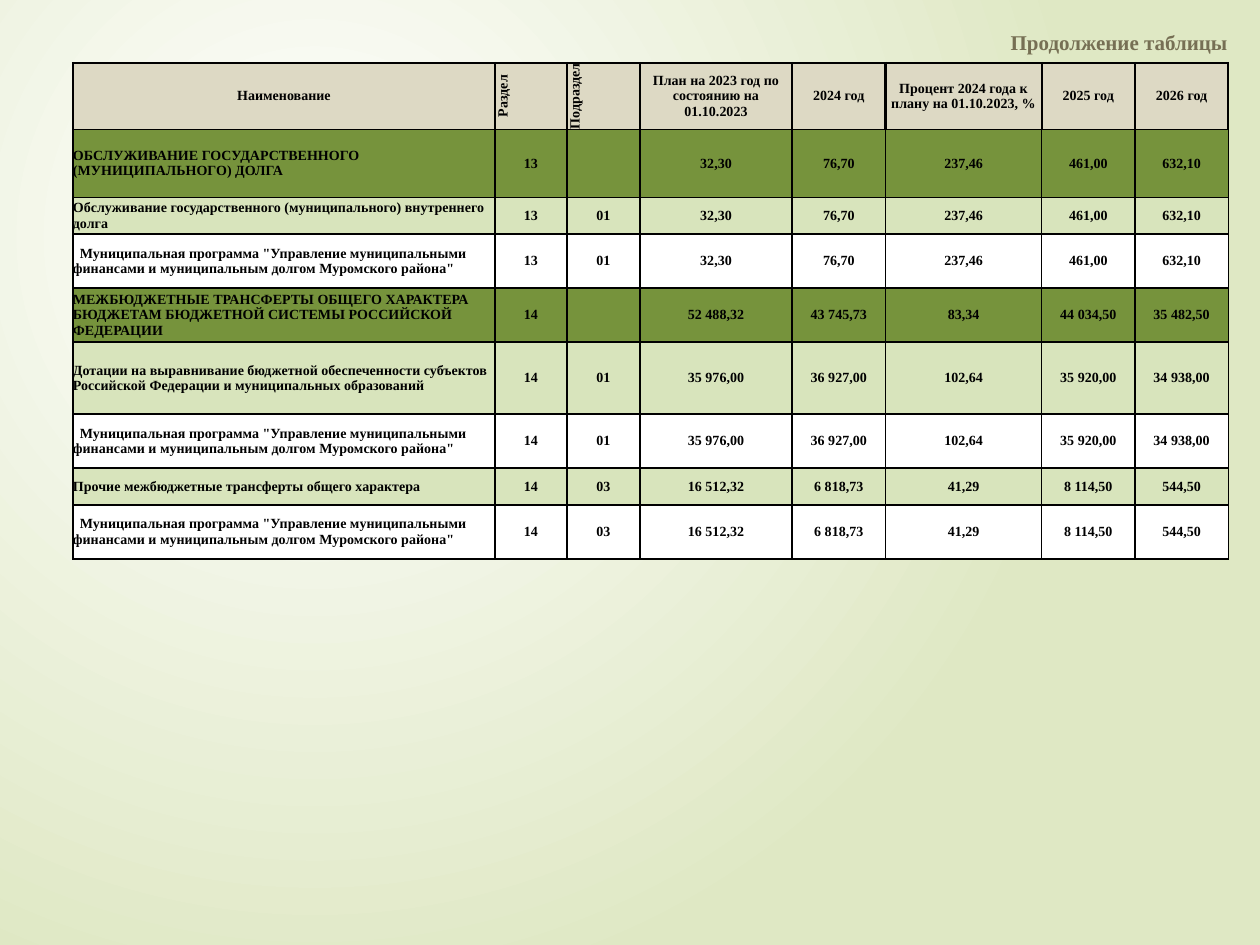
from dataclasses import dataclass

from lxml.etree import SubElement
from pptx import Presentation
from pptx.dml.color import RGBColor
from pptx.enum.text import MSO_ANCHOR, MSO_AUTO_SIZE, PP_ALIGN
from pptx.oxml import parse_xml
from pptx.oxml.ns import nsdecls, qn
from pptx.util import Cm, Pt


@dataclass(frozen=True)
class Theme:
    font: str = "Times New Roman"
    title_size: float = 12
    table_size: float = 8
    title_color: str = "766F54"
    ink: str = "000000"
    header: str = "DDD9C4"
    section: str = "76933C"
    subsection: str = "D8E4BC"
    program: str = "FFFFFF"
    glow: str = "FFFFFF"
    backdrop: str = "DFE8C4"
    thin: float = 1
    thick: float = 1.5
    program_indent: float = 0.14


class BudgetSlide:
    def __init__(self, deck, theme):
        self.theme = theme
        self.slide = deck.slides.add_slide(deck.slide_layouts[5])

    def background(self):
        """Radial gradient centred in the upper left part."""
        stops = "".join(
            f'<a:gs pos="{pos}"><a:srgbClr val="{color}"/></a:gs>'
            for pos, color in ((0, self.theme.glow), (100000, self.theme.backdrop))
        )
        backdrop = parse_xml(
            f'<p:bg {nsdecls("p", "a")}><p:bgPr><a:gradFill rotWithShape="1">'
            f"<a:gsLst>{stops}</a:gsLst>"
            '<a:path path="circle">'
            '<a:fillToRect l="50000" t="50000" r="100000" b="100000"/></a:path>'
            "</a:gradFill><a:effectLst/></p:bgPr></p:bg>"
        )
        self.slide.element.cSld.insert(0, backdrop)

    def add_run(self, paragraph, text, size, color):
        run = paragraph.add_run()
        run.text = text
        run.font.name = self.theme.font
        run.font.size = Pt(size)
        run.font.bold = True
        run.font.color.rgb = RGBColor.from_string(color)

    def title(self, text, left, top, width, height):
        heading = self.slide.shapes.title
        heading.left, heading.top = Cm(left), Cm(top)
        heading.width, heading.height = Cm(width), Cm(height)
        frame = heading.text_frame
        frame.word_wrap = True
        frame.auto_size = MSO_AUTO_SIZE.NONE
        frame.vertical_anchor = MSO_ANCHOR.TOP
        paragraph = frame.paragraphs[0]
        paragraph.alignment = PP_ALIGN.JUSTIFY
        self.add_run(paragraph, text, self.theme.title_size, self.theme.title_color)

    def borders(self, cell, outer, bottom):
        properties = cell._tc.get_or_add_tcPr()
        for side, width in zip("LRTB", (outer, outer, outer, bottom)):
            line = SubElement(properties, qn(f"a:ln{side}"), w=str(Pt(width)))
            fill = SubElement(line, qn("a:solidFill"))
            SubElement(fill, qn("a:srgbClr"), val=self.theme.ink)

    def cell(self, cell, text, color, align, outer):
        self.borders(cell, outer, self.theme.thin)
        cell.fill.solid()
        cell.fill.fore_color.rgb = RGBColor.from_string(color)
        cell.margin_left = cell.margin_right = 0
        cell.margin_top = cell.margin_bottom = 0
        cell.vertical_anchor = MSO_ANCHOR.MIDDLE
        paragraph = cell.text_frame.paragraphs[0]
        paragraph.alignment = align
        if text:
            self.add_run(paragraph, text, self.theme.table_size, self.theme.ink)

    def table(self, left, top, widths, heights, headings, rows):
        theme = self.theme
        table = self.slide.shapes.add_table(
            len(heights), len(widths),
            Cm(left), Cm(top), Cm(sum(widths)), Cm(sum(heights)),
        ).table
        table.horz_banding = False
        for column, width in zip(table.columns, widths):
            column.width = Cm(width)
        for row, height in zip(table.rows, heights):
            row.height = Cm(height)

        # Header row, with the two code columns turned upright
        for index, (heading, upright) in enumerate(headings):
            cell = table.cell(0, index)
            self.cell(cell, heading, theme.header, PP_ALIGN.CENTER, theme.thick)
            if upright:
                cell._tc.tcPr.set("vert", "vert270")

        # Budget lines, coloured by level
        for row_index, (color, *values) in enumerate(rows, start=1):
            for index, value in enumerate(values):
                align = PP_ALIGN.CENTER if index else PP_ALIGN.LEFT
                self.cell(table.cell(row_index, index), value, color, align, theme.thin)
            if color == theme.program:
                name = table.cell(row_index, 0).text_frame.paragraphs[0]
                name._p.get_or_add_pPr().set("indent", str(Cm(theme.program_indent)))


def main():
    theme = Theme()
    deck = Presentation()
    deck.slide_width, deck.slide_height = Cm(25.4), Cm(19.05)

    # Table content
    headings = [
        ("Наименование", False),
        ("Раздел", True),
        ("Подраздел", True),
        ("План на 2023 год по состоянию на 01.10.2023", False),
        ("2024 год", False),
        ("Процент 2024 года к плану на 01.10.2023, %", False),
        ("2025 год", False),
        ("2026 год", False),
    ]
    program = (
        'Муниципальная программа "Управление муниципальными финансами '
        'и муниципальным долгом Муромского района"'
    )
    debt = ("32,30", "76,70", "237,46", "461,00", "632,10")
    transfers = ("52 488,32", "43 745,73", "83,34", "44 034,50", "35 482,50")
    grants = ("35 976,00", "36 927,00", "102,64", "35 920,00", "34 938,00")
    other = ("16 512,32", "6 818,73", "41,29", "8 114,50", "544,50")
    rows = [
        (theme.section, "ОБСЛУЖИВАНИЕ ГОСУДАРСТВЕННОГО (МУНИЦИПАЛЬНОГО) ДОЛГА",
         "13", "", *debt),
        (theme.subsection,
         "Обслуживание государственного (муниципального) внутреннего долга",
         "13", "01", *debt),
        (theme.program, program, "13", "01", *debt),
        (theme.section,
         "МЕЖБЮДЖЕТНЫЕ ТРАНСФЕРТЫ ОБЩЕГО ХАРАКТЕРА БЮДЖЕТАМ "
         "БЮДЖЕТНОЙ СИСТЕМЫ РОССИЙСКОЙ ФЕДЕРАЦИИ",
         "14", "", *transfers),
        (theme.subsection,
         "Дотации на выравнивание бюджетной обеспеченности субъектов "
         "Российской Федерации и муниципальных образований",
         "14", "01", *grants),
        (theme.program, program, "14", "01", *grants),
        (theme.subsection, "Прочие межбюджетные трансферты общего характера",
         "14", "03", *other),
        (theme.program, program, "14", "03", *other),
    ]

    # Slide
    budget = BudgetSlide(deck, theme)
    budget.background()
    budget.title("Продолжение таблицы", 20.12, 0.46, 5.08, 1.22)
    budget.table(
        1.47, 1.27,
        widths=[8.51, 1.45, 1.47, 3.07, 1.88, 3.15, 1.88, 1.88],
        heights=[1.12, 1.37, 0.74, 1.09, 1.09, 1.45, 1.09, 0.74, 1.09],
        headings=headings,
        rows=rows,
    )
    deck.save("out.pptx")


if __name__ == "__main__":
    main()
